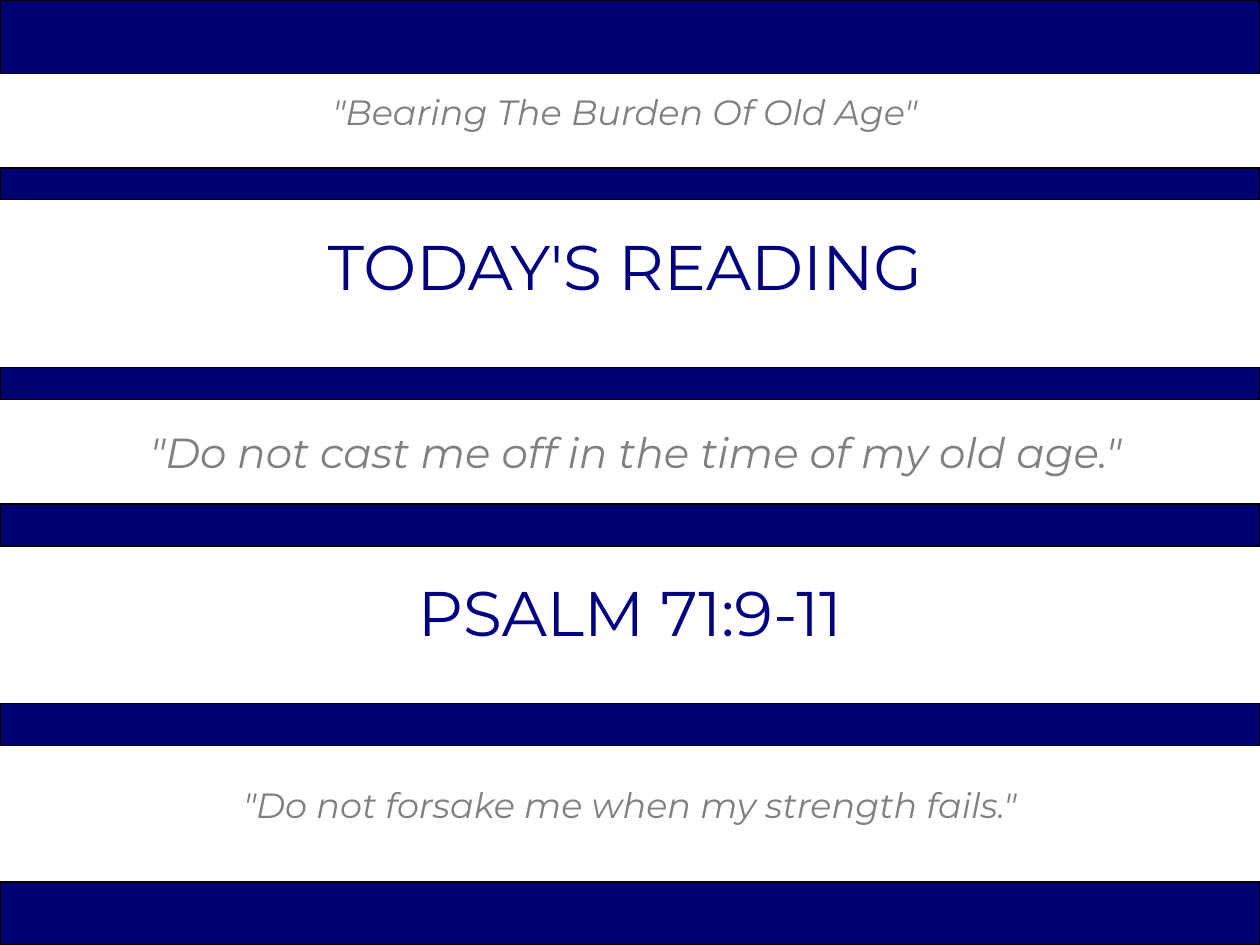
from dataclasses import dataclass

from lxml.etree import SubElement
from pptx import Presentation
from pptx.dml.color import RGBColor
from pptx.enum.shapes import MSO_SHAPE
from pptx.enum.text import MSO_ANCHOR, MSO_AUTO_SIZE, PP_ALIGN
from pptx.oxml import parse_xml
from pptx.oxml.ns import nsdecls, qn
from pptx.util import Cm, Pt


@dataclass(frozen=True)
class Theme:
    """Colours, font and type sizes of the slide."""
    font: str = "Montserrat"
    band: str = "000072"
    edge: str = "000000"
    head: str = "3366FF"
    quote: str = "808080"
    rim: str = "000080"
    big: int = 36
    mid: int = 24
    small: int = 20


THEME = Theme()
PAGE = (0, 0, 25.4, 19.05)
BANDS = [(0, 1.48), (3.39, 0.64), (7.41, 0.64),
         (10.16, 0.85), (14.18, 0.85), (17.78, 1.27)]
QUOTES = [
    ('"Do not cast me off in the time of my old age."',
     (0.85, 8.47, 23.92, 1.9), THEME.mid),
    ('"Do not forsake me when my strength fails."',
     (1.06, 15.66, 23.28, 2.33), THEME.small),
    ('"Bearing The Burden Of Old Age"',
     (0.64, 1.69, 23.92, 1.69), THEME.small),
]


def apply(item, form):
    """Set each attribute of the item from a dict."""
    for name, value in form.items():
        setattr(item, name, value)


def rim(run, width):
    """Outline the letters of a run, width in points."""
    line = parse_xml(
        f'<a:ln {nsdecls("a")} w="{Pt(width)}"><a:solidFill>'
        f'<a:srgbClr val="{THEME.rim}"/></a:solidFill></a:ln>')
    run.font._element.insert(0, line)


def write(shape, box, text, size, color, width, italic=None):
    """Place a shape in its box and write one centred line in it."""
    apply(shape, dict(zip(("left", "top", "width", "height"), map(Cm, box))))
    frame = shape.text_frame
    apply(frame, {"word_wrap": False, "auto_size": MSO_AUTO_SIZE.NONE,
                  "vertical_anchor": MSO_ANCHOR.TOP})
    line = frame.paragraphs[0]
    line.alignment = PP_ALIGN.CENTER
    run = line.add_run()
    run.text = text
    apply(run.font, {"name": THEME.font, "size": Pt(size), "italic": italic})
    run.font.color.rgb = RGBColor.from_string(color)
    rim(run, width)
    return run


def heading(shape, box, text):
    """Write a large half-clear heading."""
    run = write(shape, box, text, THEME.big, THEME.head, 2.5)
    color = run.font._element.find(f'{qn("a:solidFill")}/{qn("a:srgbClr")}')
    SubElement(color, qn("a:alpha"), val="50000")


def quote(slide, box, text, size):
    """Add a grey italic quotation."""
    shape = slide.shapes.add_textbox(0, 0, 0, 0)
    write(shape, box, text, size, THEME.quote, 1.5, True)


def stripes(slide, box, rows):
    """Draw full-width bands at given offsets down the box."""
    left, top, width, _ = box
    for drop, height in rows:
        band = slide.shapes.add_shape(
            MSO_SHAPE.RECTANGLE, Cm(left), Cm(top + drop), Cm(width), Cm(height))
        band.shadow.inherit = False
        band.fill.solid()
        band.fill.fore_color.rgb = RGBColor.from_string(THEME.band)
        band.line.color.rgb = RGBColor.from_string(THEME.edge)
        band.line.width = Pt(0.75)


def main():
    """Build and save the reading slide."""
    deck = Presentation()
    apply(deck, {"slide_width": Cm(PAGE[2]), "slide_height": Cm(PAGE[3])})
    slide = deck.slides.add_slide(deck.slide_layouts[5])
    heading(slide.shapes.title, (3.39, 4.45, 18.42, 2.75), "TODAY'S READING")
    psalm = slide.shapes.add_textbox(0, 0, 0, 0)
    heading(psalm, (3.81, 11.43, 17.78, 2.33), "PSALM 71:9-11")
    for text, box, size in QUOTES:
        quote(slide, box, text, size)
    stripes(slide, PAGE, BANDS)
    deck.save("out.pptx")


if __name__ == "__main__":
    main()
